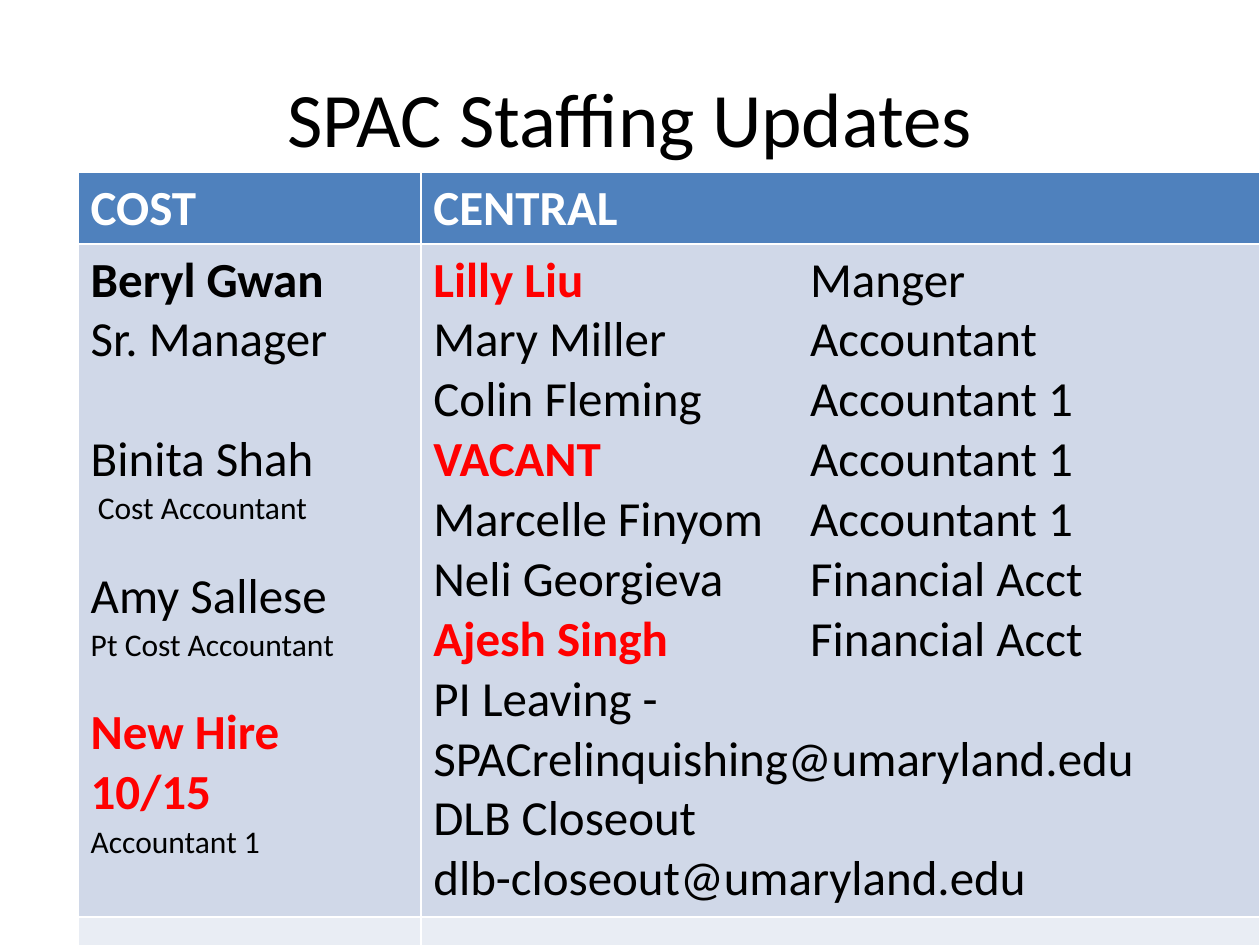
from lxml.etree import SubElement
from pptx import Presentation
from pptx.dml.color import RGBColor
from pptx.enum.text import MSO_ANCHOR, PP_ALIGN
from pptx.oxml.ns import qn
from pptx.util import Inches, Pt

BLACK = RGBColor(0x00, 0x00, 0x00)
WHITE = RGBColor(0xFF, 0xFF, 0xFF)
RED = RGBColor(0xFF, 0x00, 0x00)
HEADER_BLUE = RGBColor(0x4F, 0x81, 0xBD)
BAND_DARK = RGBColor(0xD0, 0xD8, 0xE8)
BAND_LIGHT = RGBColor(0xE9, 0xED, 0xF4)

FONT = "Calibri"
LARGE, SMALL = 28, 18
LINE_SPACING = 1.22  # height of one Calibri line, as a share of its size

TITLE = "SPAC Staffing Updates"
HEADINGS = ["COST", "CENTRAL"]
# name, name colour, bold, role, role size, size of the empty line above
COST_STAFF = [
    ("Beryl Gwan", BLACK, True, "Sr. Manager", LARGE, 0),
    ("Binita Shah", BLACK, False, " Cost Accountant", SMALL, LARGE),
    ("Amy Sallese", BLACK, False, "Pt Cost Accountant", SMALL, SMALL),
    ("New Hire 10/15", RED, True, "Accountant 1", SMALL, SMALL),
]
# name, role, highlighted
CENTRAL_STAFF = [
    ("Lilly Liu", "Manger", True),
    ("Mary Miller", "Accountant", False),
    ("Colin Fleming", "Accountant 1", False),
    ("VACANT", "Accountant 1", True),
    ("Marcelle Finyom", "Accountant 1", False),
    ("Neli Georgieva", "Financial Acct", False),
    ("Ajesh Singh", "Financial Acct", True),
]
CENTRAL_NOTES = [
    "PI Leaving - SPACrelinquishing@umaryland.edu",
    "DLB Closeout",
    "dlb-closeout@umaryland.edu",
]

COLUMN_WIDTHS = [2.72, 6.66]
ROW_HEIGHTS = [0.55, 5.34, 0.31]
ROW_FILLS = [HEADER_BLUE, BAND_DARK, BAND_LIGHT]
TABLE_LEFT, TABLE_TOP = 0.62, 1.37
ROLE_TAB = 2.99


def add_span(para, text, size=LARGE, color=BLACK, bold=False):
    span = para.add_run()
    span.text = text
    font = span.font
    font.name, font.size, font.bold = FONT, Pt(size), bold
    font.color.rgb = color


def next_para(frame):
    """Return the empty first paragraph, or a new one after it."""
    first = frame.paragraphs[0]
    return frame.add_paragraph() if first.runs else first


def add_tab_stop(para, inches):
    tabs = SubElement(para._p.get_or_add_pPr(), qn("a:tabLst"))
    SubElement(tabs, qn("a:tab"), pos=str(Inches(inches)), algn="l")


def add_title(page):
    box = page.shapes.add_textbox(Inches(0.5), Inches(0.3), Inches(9), Inches(1.25))
    frame = box.text_frame
    frame.word_wrap = True
    frame.vertical_anchor = MSO_ANCHOR.MIDDLE
    para = frame.paragraphs[0]
    para.alignment = PP_ALIGN.CENTER
    add_span(para, TITLE, 44)


def add_staff_table(page):
    table = page.shapes.add_table(
        len(ROW_HEIGHTS), len(COLUMN_WIDTHS), Inches(TABLE_LEFT), Inches(TABLE_TOP),
        Inches(sum(COLUMN_WIDTHS)), Inches(sum(ROW_HEIGHTS))).table
    for column, width in zip(table.columns, COLUMN_WIDTHS):
        column.width = Inches(width)
    for row, height, color in zip(table.rows, ROW_HEIGHTS, ROW_FILLS):
        row.height = Inches(height)
        for cell in row.cells:
            cell.fill.solid()
            cell.fill.fore_color.rgb = color
    for cell in table.rows[2].cells:
        cell.margin_top = cell.margin_bottom = 0
    return table


def fill_cost(frame):
    for name, color, bold, role, role_size, gap in COST_STAFF:
        para = next_para(frame)
        if gap:
            para.space_before = Pt(round(gap * LINE_SPACING))
        add_span(para, name, LARGE, color, bold)
        add_span(next_para(frame), role, role_size)


def fill_central(frame):
    for name, role, highlighted in CENTRAL_STAFF:
        para = next_para(frame)
        add_tab_stop(para, ROLE_TAB)
        add_span(para, name + "\t", LARGE, RED if highlighted else BLACK, highlighted)
        add_span(para, role)
    for note in CENTRAL_NOTES:
        add_span(next_para(frame), note)


def main():
    deck = Presentation()
    deck.slide_width, deck.slide_height = Inches(10), Inches(7.5)
    page = deck.slides.add_slide(deck.slide_layouts[6])
    add_title(page)
    table = add_staff_table(page)
    for column, heading in enumerate(HEADINGS):
        add_span(table.cell(0, column).text_frame.paragraphs[0], heading, LARGE, WHITE, True)
    fill_cost(table.cell(1, 0).text_frame)
    fill_central(table.cell(1, 1).text_frame)
    deck.save("out.pptx")


if __name__ == "__main__":
    main()
